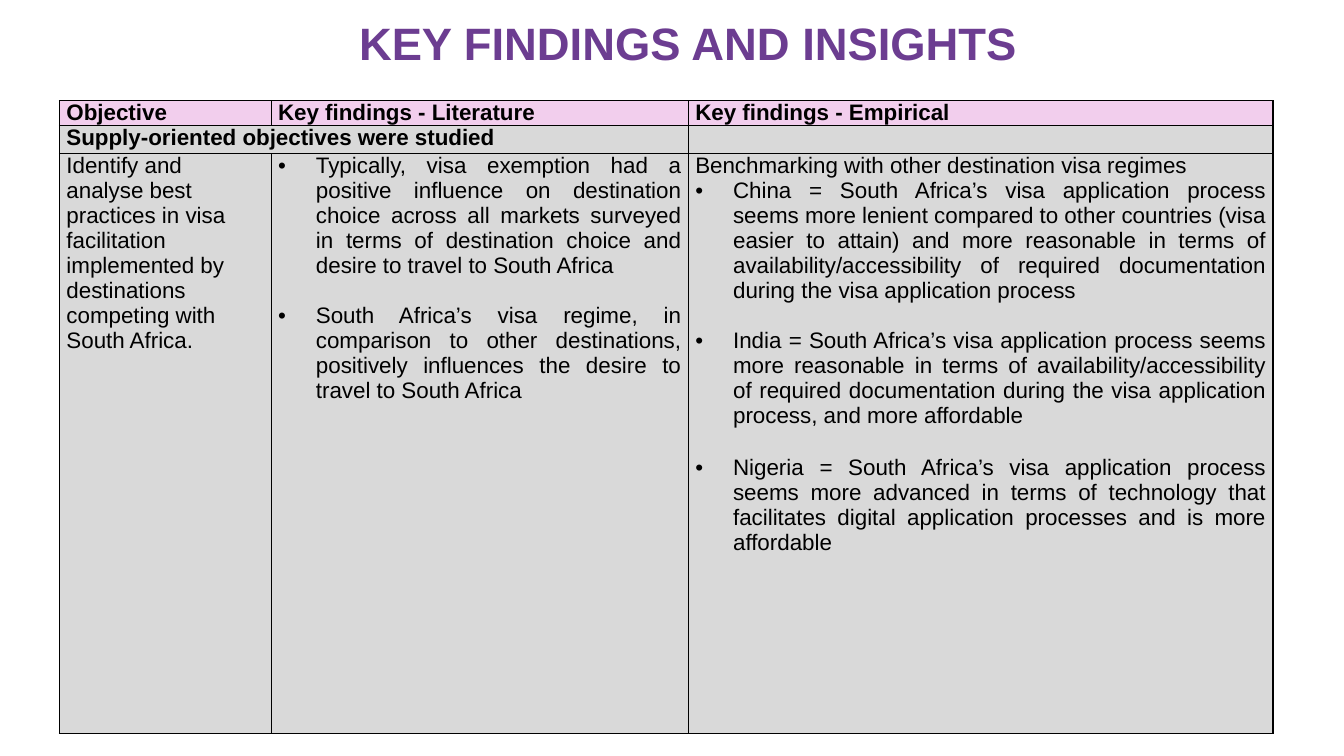
import pptx
import pptx.dml.color
import pptx.enum.text
import pptx.util
from lxml import etree
from pptx.oxml.ns import qn

Pt = pptx.util.Pt
RGB = pptx.dml.color.RGBColor.from_string
ALIGN = pptx.enum.text.PP_ALIGN
ANCHOR = pptx.enum.text.MSO_ANCHOR

COLORS = {"title": "6C3D91", "header": "F2CEED", "body": "D9D9D9", "black": "000000"}
FONT = "Arial"


def write(p, text, size=16, bold=False, color="black", align=ALIGN.JUSTIFY,
          bullet=False, before=0):
    """Fill one paragraph with a formatted run; bullet adds a hanging indent."""
    if bullet:
        pPr = p._p.get_or_add_pPr()
        pPr.set("marL", str(Pt(27)))
        pPr.set("indent", str(-Pt(27)))
        etree.SubElement(pPr, qn("a:buFont"), typeface=FONT)
        etree.SubElement(pPr, qn("a:buChar"), char="•")
    p.alignment = align
    if before:
        p.space_before = Pt(before)
    r = p.add_run()
    r.text = text
    r.font.name = FONT
    r.font.size = Pt(size)
    r.font.bold = bold
    r.font.color.rgb = RGB(COLORS[color])


def style_cell(cell, fill):
    """Give a cell thin black borders, a plain fill and tight margins."""
    cell.margin_left = cell.margin_right = Pt(5)
    cell.margin_top = cell.margin_bottom = Pt(0)
    tcPr = cell._tc.get_or_add_tcPr()
    for side in ("lnL", "lnR", "lnT", "lnB"):
        ln = etree.SubElement(tcPr, qn(f"a:{side}"), w=str(Pt(1)))
        line_fill = etree.SubElement(ln, qn("a:solidFill"))
        etree.SubElement(line_fill, qn("a:srgbClr"), val=COLORS["black"])
    cell.fill.solid()
    cell.fill.fore_color.rgb = RGB(COLORS[fill])


prs = pptx.Presentation()
prs.slide_width, prs.slide_height = Pt(960), Pt(540)
slide = prs.slides.add_slide(prs.slide_layouts[5])

title = slide.shapes.title
title.left, title.top, title.width, title.height = Pt(121.7), Pt(13.7), Pt(739.4), Pt(38.2)
tf = title.text_frame
tf.word_wrap = True
tf.auto_size = pptx.enum.text.MSO_AUTO_SIZE.NONE
tf.vertical_anchor = ANCHOR.MIDDLE
tf.paragraphs[0].line_spacing = 0.9
write(tf.paragraphs[0], "KEY FINDINGS AND INSIGHTS", size=32.4, bold=True,
      color="title", align=ALIGN.CENTER)

widths = [151.2, 298, 417.6]
heights = [17.5, 20, 414]
table = slide.shapes.add_table(3, 3, Pt(42.5), Pt(72), Pt(sum(widths)), Pt(sum(heights))).table
table.first_row = table.horz_banding = False
for column, width in zip(table.columns, widths):
    column.width = Pt(width)
for i, (row, height) in enumerate(zip(table.rows, heights)):
    row.height = Pt(height)
    for cell in row.cells:
        style_cell(cell, "body" if i else "header")

for cell, text in zip(table.rows[0].cells,
                      ["Objective", "Key findings - Literature", "Key findings - Empirical"]):
    write(cell.text_frame.paragraphs[0], text, bold=True)

table.cell(1, 0).merge(table.cell(1, 1))
write(table.cell(1, 0).text_frame.paragraphs[0],
      "Supply-oriented objectives were studied", bold=True)
# The empty cell needs a small text size so that it does not stretch its row
empty = table.cell(1, 2).text_frame.paragraphs[0]
etree.SubElement(empty._p, qn("a:endParaRPr"), sz="1600")

bullet = {"bullet": True}
findings = [
    [("Identify and analyse best practices in visa facilitation implemented by "
      "destinations competing with South Africa.", {"align": ALIGN.LEFT})],
    [("Typically, visa exemption had a positive influence on destination choice across "
      "all markets surveyed in terms of destination choice and desire to travel to "
      "South Africa", bullet),
     ("South Africa’s visa regime, in comparison to other destinations, positively "
      "influences the desire to travel to South Africa", {**bullet, "before": 18})],
    [("Benchmarking with other destination visa regimes", {}),
     ("China = South Africa’s visa application process seems more lenient compared to "
      "other countries (visa easier to attain) and more reasonable in terms of "
      "availability/accessibility of required documentation during the visa "
      "application process", bullet),
     ("India = South Africa’s visa application process seems more reasonable in terms "
      "of availability/accessibility of required documentation during the visa "
      "application process, and more affordable", {**bullet, "before": 18}),
     ("Nigeria = South Africa’s visa application process seems more advanced in terms "
      "of technology that facilitates digital application processes and is more "
      "affordable", {**bullet, "before": 20})],
]
for cell, paragraphs in zip(table.rows[2].cells, findings):
    tf = cell.text_frame
    for i, (text, options) in enumerate(paragraphs):
        p = tf.add_paragraph() if i else tf.paragraphs[0]
        write(p, text, **options)

prs.save("out.pptx")
